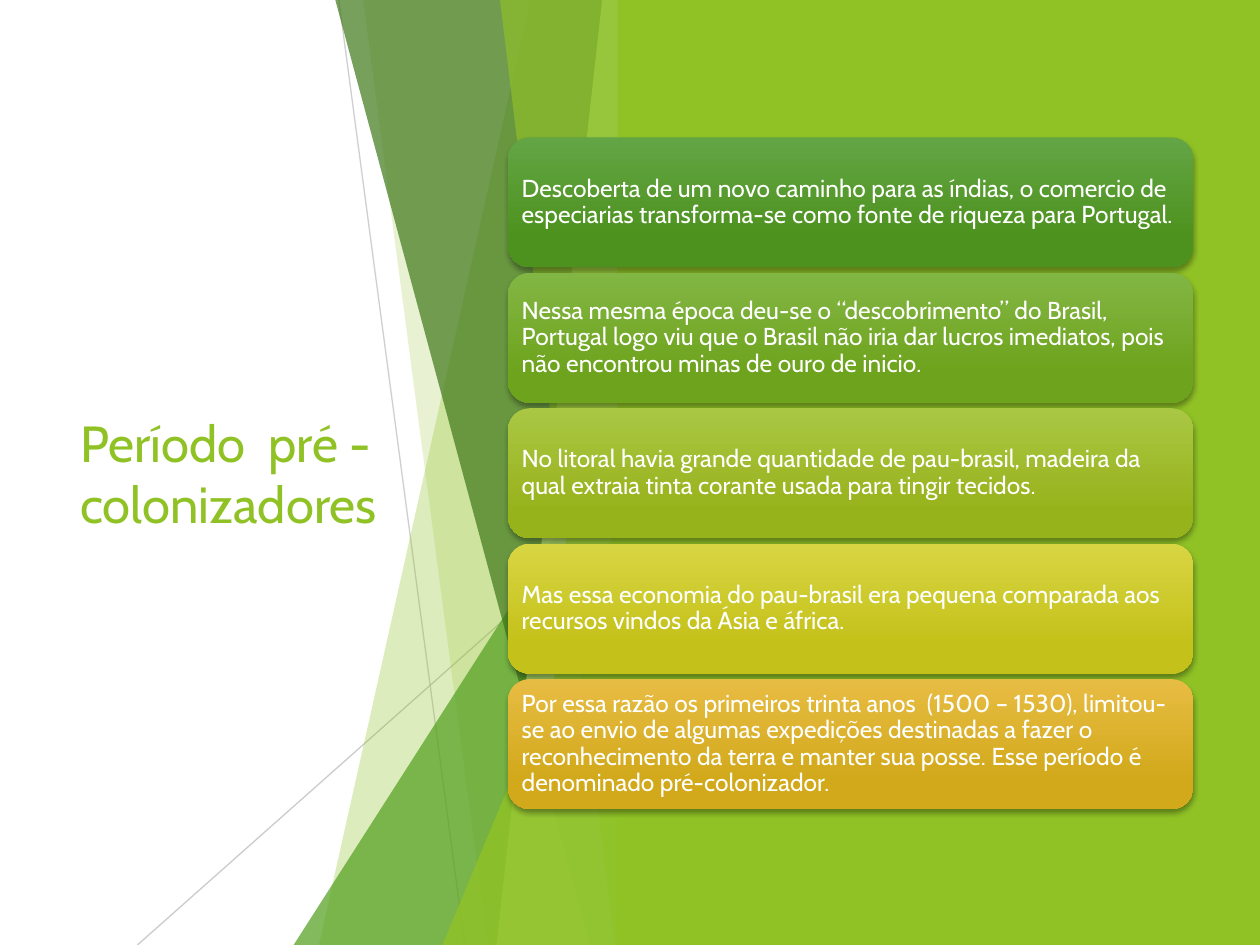
import lxml.etree
import pptx
import pptx.dml.color
import pptx.enum.shapes
import pptx.enum.text
import pptx.oxml.ns
import pptx.util

Cm = pptx.util.Cm
Pt = pptx.util.Pt
qn = pptx.oxml.ns.qn
SHAPE = pptx.enum.shapes.MSO_SHAPE
ANCHOR = pptx.enum.text.MSO_ANCHOR
ALIGN = pptx.enum.text.PP_ALIGN

FONT = "Cabin"
WIDTH, HEIGHT = 25.4, 19.05
COLORS = {
    "white": "FFFFFF",
    "black": "000000",
    "gray": "BFBFBF",
    "lime": "90C226",
    "green": "54A021",
    "forest": "3F7819",
    "pale": "C0E474",
}
CARDS = [
    ("63A545", "4D921E",
     "Descoberta de um novo caminho para as índias, o comercio de especiarias "
     "transforma-se como fonte de riqueza para Portugal."),
    ("82B644", "6EA31D",
     "Nessa mesma época deu-se o “descobrimento” do Brasil, Portugal logo viu que "
     "o Brasil não iria dar lucros imediatos, pois não encontrou minas de ouro de inicio."),
    ("AAC744", "97B31C",
     "No litoral havia grande quantidade de pau-brasil, madeira da qual extraia "
     "tinta corante usada para tingir tecidos."),
    ("D8D543", "C4C11A",
     "Mas essa economia do pau-brasil era pequena comparada aos recursos vindos "
     "da Ásia e áfrica."),
    ("E7BC43", "D2A91B",
     "Por essa razão os primeiros trinta anos  (1500 – 1530), limitou-se ao envio de "
     "algumas expedições destinadas a fazer o reconhecimento da terra e manter sua "
     "posse. Esse período é denominado pré-colonizador."),
]


def rgb(value):
    return pptx.dml.color.RGBColor.from_string(value)


def set_alpha(properties, percent):
    color = next(properties.iter(qn("a:srgbClr")))
    lxml.etree.SubElement(color, qn("a:alpha"), val=str(percent * 1000))


def paint(shape, color, opacity=100):
    shape.shadow.inherit = False
    shape.fill.solid()
    shape.fill.fore_color.rgb = rgb(COLORS[color])
    shape.line.fill.background()
    if opacity < 100:
        set_alpha(shape.element.spPr, opacity)


def add_line(slide, start, end, opacity):
    line = slide.shapes.add_connector(
        pptx.enum.shapes.MSO_CONNECTOR.STRAIGHT,
        Cm(start[0]), Cm(start[1]), Cm(end[0]), Cm(end[1]))
    line.line.color.rgb = rgb(COLORS["gray"])
    line.line.width = Pt(0.75)
    properties = line.element.spPr
    set_alpha(properties, opacity)
    lxml.etree.SubElement(properties, qn("a:effectLst"))


def add_band(slide, left_top, left_bottom, right, top, bottom, color, opacity):
    builder = slide.shapes.build_freeform(Cm(left_top), Cm(top))
    builder.add_line_segments([
        (Cm(right), Cm(top)), (Cm(right), Cm(bottom)), (Cm(left_bottom), Cm(bottom))])
    paint(builder.convert_to_shape(), color, opacity)


def add_corner(slide, left, top, right, bottom, color, opacity):
    triangle = slide.shapes.add_shape(
        SHAPE.ISOSCELES_TRIANGLE, Cm(left), Cm(top), Cm(right - left), Cm(bottom - top))
    triangle.adjustments[0] = 1
    paint(triangle, color, opacity)


def add_facets(slide, left, top, width, height):
    right, bottom = left + width, top + height
    add_line(slide, (left + 4.06, top), (left + 6.6, bottom), 75)
    add_line(slide, (right, top + 10.24), (left, bottom), 80)

    def band(upper, lower, color, opacity):
        add_band(slide, left + upper, left + lower, right, top, bottom, color, opacity)

    def corner(x, y, color, opacity):
        add_corner(slide, left + x, top + y, right, bottom, color, opacity)

    band(7.92, 3.66, "lime", 30)
    band(4.55, 7.06, "lime", 20)
    corner(3.15, 8.46, "green", 72)
    band(3.99, 9.12, "forest", 70)
    band(9.37, 7.24, "pale", 70)
    band(7.31, 9.63, "lime", 65)
    corner(6.15, 9.98, "lime", 80)


def add_panel(slide, left, top, width, height):
    panel = slide.shapes.add_shape(
        SHAPE.RECTANGLE, Cm(left), Cm(top), Cm(width), Cm(height))
    paint(panel, "lime")


def write_text(frame, text, size, color):
    frame.word_wrap = True
    frame.vertical_anchor = ANCHOR.MIDDLE
    paragraph = frame.paragraphs[0]
    paragraph.alignment = ALIGN.LEFT
    run = paragraph.add_run()
    run.text = text
    run.font.name = FONT
    run.font.size = Pt(size)
    run.font.color.rgb = rgb(COLORS[color])
    return paragraph


def add_title(slide, left, top, width, height):
    title = slide.shapes.add_textbox(Cm(left), Cm(top), Cm(width), Cm(height))
    write_text(title.text_frame, "Período  pré - colonizadores", 29, "lime")


def add_shadow(shape):
    shape.shadow.inherit = False
    effects = shape.element.spPr.find(qn("a:effectLst"))
    shadow = lxml.etree.SubElement(
        effects, qn("a:outerShdw"), blurRad=str(Pt(3)), dist=str(Pt(2)),
        dir="5400000", rotWithShape="0")
    color = lxml.etree.SubElement(shadow, qn("a:srgbClr"), val=COLORS["black"])
    lxml.etree.SubElement(color, qn("a:alpha"), val="35000")


def add_card(slide, left, top, width, height, light, dark, text):
    card = slide.shapes.add_shape(
        SHAPE.ROUNDED_RECTANGLE, Cm(left), Cm(top), Cm(width), Cm(height))
    card.fill.gradient()
    card.fill.gradient_angle = 270
    for stop, position, color in zip(card.fill.gradient_stops, (0, 0.78), (light, dark)):
        stop.position = position
        stop.color.rgb = rgb(color)
    card.line.fill.background()
    add_shadow(card)
    frame = card.text_frame
    frame.margin_left = frame.margin_right = Cm(0.15)
    frame.margin_top = frame.margin_bottom = Cm(0.15)
    write_text(frame, text, 14, "white").line_spacing = 0.9


def add_cards(slide, left, top, width, height, gap=0.11):
    card_height = (height - gap * (len(CARDS) - 1)) / len(CARDS)
    for index, (light, dark, text) in enumerate(CARDS):
        card_top = top + index * (card_height + gap)
        add_card(slide, left, card_top, width, card_height, light, dark, text)


def main():
    presentation = pptx.Presentation()
    presentation.slide_width = Cm(WIDTH)
    presentation.slide_height = Cm(HEIGHT)
    slide = presentation.slides.add_slide(presentation.slide_layouts[6])
    slide.background.fill.solid()
    slide.background.fill.fore_color.rgb = rgb(COLORS["white"])
    add_title(slide, 1.37, 3.84, 7.39, 11.38)
    add_facets(slide, 2.77, 0, 9.93, HEIGHT)
    add_panel(slide, 12.45, 0, WIDTH - 12.45, HEIGHT)
    add_cards(slide, 10.24, 2.77, 13.82, 13.54)
    presentation.save("out.pptx")


if __name__ == "__main__":
    main()
